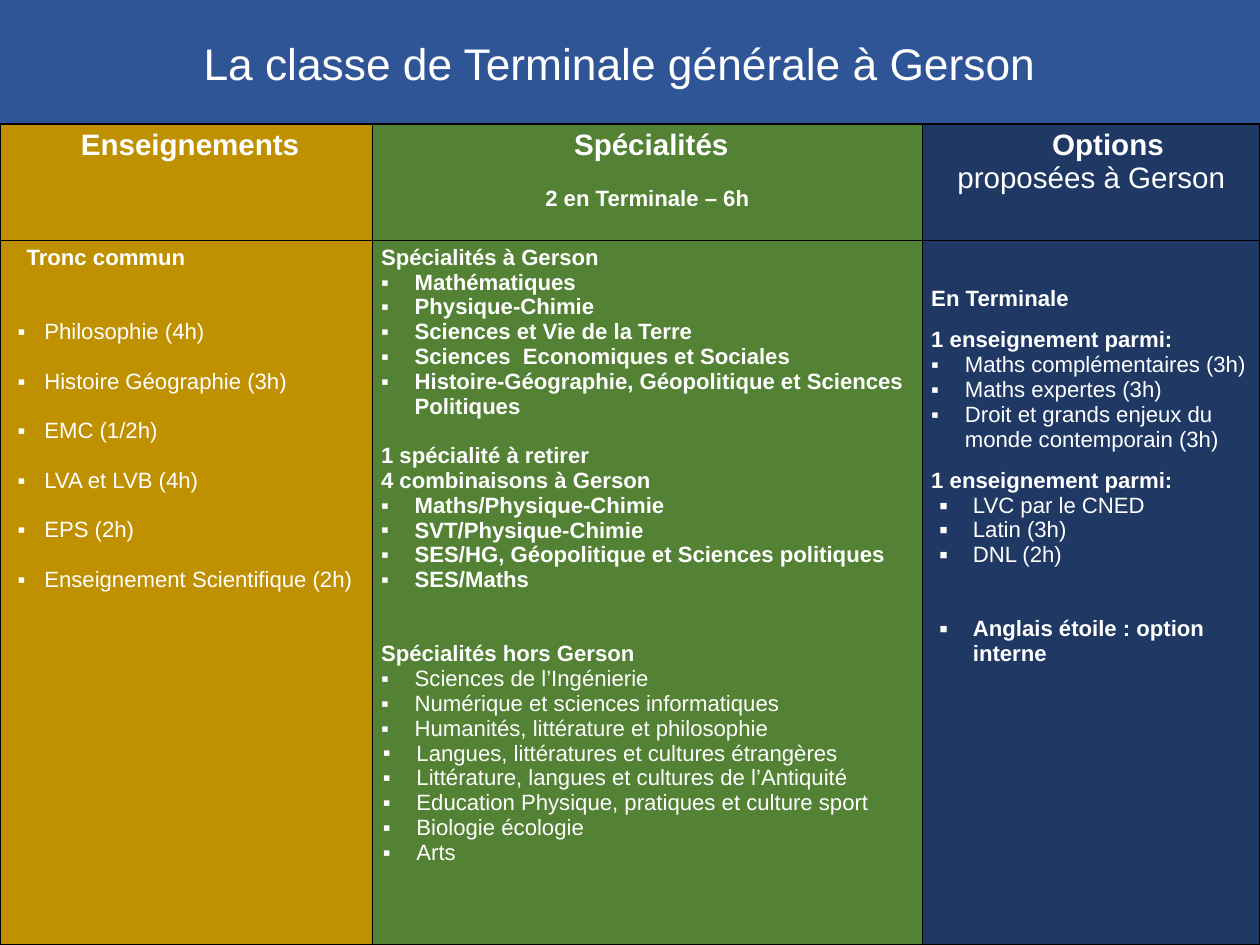
from dataclasses import dataclass

from lxml.etree import SubElement
from pptx import Presentation
from pptx.dml.color import RGBColor
from pptx.enum.text import MSO_ANCHOR, MSO_AUTO_SIZE, PP_ALIGN
from pptx.oxml.ns import qn
from pptx.util import Inches, Pt

SLIDE_WIDTH, SLIDE_HEIGHT = Inches(14.22), Inches(10.67)
COLUMN_WIDTHS = (Inches(4.2), Inches(6.21), Inches(3.81))
ROW_HEIGHTS = (Inches(1.32), Inches(7.94))
TABLE_TOP = Inches(1.4)

BLUE = RGBColor(0x2F, 0x55, 0x97)
GOLD = RGBColor(0xBF, 0x90, 0x00)
GREEN = RGBColor(0x54, 0x82, 0x35)
NAVY = RGBColor(0x20, 0x38, 0x64)
BLACK = RGBColor(0, 0, 0)
WHITE = RGBColor(0xFF, 0xFF, 0xFF)

FONT = "Arial"
BLANK_LINE = 20.1
SECTION_GAP = 13.4


@dataclass
class Line:
    text: str
    bold: bool = False
    size: int = 18
    gap: float = 0
    margin: float = 0
    hanging: float = 0
    bullet_size: int = 100


def heading(text, gap=0, margin=0):
    return Line(text, True, gap=gap, margin=margin)


def bullets(texts, bold=False, gap=0, margin=0.38, hanging=0.38, bullet_size=100):
    return [Line(text, bold, 18, gap, margin, hanging, bullet_size) for text in texts]


HEADERS = (
    [Line("Enseignements", True, 24, margin=0.09)],
    [Line("Spécialités", True, 24, margin=0.09),
     heading("2 en Terminale – 6h", BLANK_LINE)],
    [Line("Options", True, 24, margin=0.38), Line("proposées à Gerson", size=24)],
)

COMMON_CORE = [
    heading("Tronc commun", margin=0.2),
    *bullets(["Philosophie (4h)"], gap=2 * BLANK_LINE, margin=0.4, hanging=0.3),
    *bullets(["Histoire Géographie (3h)", "EMC (1/2h)", "LVA et LVB (4h)", "EPS (2h)",
              "Enseignement Scientifique (2h)"], gap=BLANK_LINE, margin=0.4, hanging=0.3),
]

SPECIALTIES = [
    heading("Spécialités à Gerson"),
    *bullets(["Mathématiques", "Physique-Chimie", "Sciences et Vie de la Terre",
              "Sciences  Economiques et Sociales",
              "Histoire-Géographie, Géopolitique et Sciences Politiques"], bold=True),
    heading("1 spécialité à retirer", BLANK_LINE),
    heading("4 combinaisons à Gerson"),
    *bullets(["Maths/Physique-Chimie", "SVT/Physique-Chimie",
              "SES/HG, Géopolitique et Sciences politiques", "SES/Maths"], bold=True),
    heading("Spécialités hors Gerson", 2 * BLANK_LINE),
    *bullets(["Sciences de l’Ingénierie", "Numérique et sciences informatiques",
              "Humanités, littérature et philosophie"]),
    *bullets(["Langues, littératures et cultures étrangères",
              "Littérature, langues et cultures de l’Antiquité",
              "Education Physique, pratiques et culture sport",
              "Biologie écologie", "Arts"], margin=0.4),
]

OPTIONS = [
    heading("En Terminale"),
    heading("1 enseignement parmi:", SECTION_GAP),
    *bullets(["Maths complémentaires (3h)", "Maths expertes (3h)",
              "Droit et grands enjeux du monde contemporain (3h)"]),
    heading("1 enseignement parmi:", SECTION_GAP),
    *bullets(["LVC par le CNED", "Latin (3h)", "DNL (2h)"], margin=0.47, bullet_size=115),
    *bullets(["Anglais étoile : option interne"], True, 2 * BLANK_LINE, 0.47,
             bullet_size=115),
]


def format_font(font, size, bold):
    font.name, font.size, font.bold = FONT, Pt(size), bold
    font.color.rgb = WHITE


def format_line(paragraph, line, alignment):
    paragraph.alignment = alignment
    paragraph.space_before = Pt(line.gap)
    properties = paragraph._p.get_or_add_pPr()
    properties.set("marL", str(Inches(line.margin)))
    properties.set("indent", str(-Inches(line.hanging)))
    if line.hanging:
        SubElement(properties, qn("a:buSzPct"), val=str(line.bullet_size * 1000))
        SubElement(properties, qn("a:buFont"), typeface=FONT)
        SubElement(properties, qn("a:buChar"), char="▪")
    for run in paragraph.runs:
        format_font(run.font, line.size, line.bold)


def draw_borders(cell):
    properties = cell._tc.get_or_add_tcPr()
    for side in ("a:lnL", "a:lnR", "a:lnT", "a:lnB"):
        border = SubElement(properties, qn(side), w=str(Pt(1)))
        paint = SubElement(border, qn("a:solidFill"))
        SubElement(paint, qn("a:srgbClr"), val=str(BLACK))


def fill_cell(cell, lines, color, alignment):
    draw_borders(cell)
    cell.fill.solid()
    cell.fill.fore_color.rgb = color
    cell.vertical_anchor = MSO_ANCHOR.TOP
    cell.text_frame.text = "\n".join(line.text for line in lines)
    for paragraph, line in zip(cell.text_frame.paragraphs, lines):
        format_line(paragraph, line, alignment)


def add_title(slide, text):
    title = slide.shapes.title
    title.left, title.top = Inches(0.25), Inches(0.35)
    title.width, title.height = Inches(13.62), Inches(0.71)
    title.fill.solid()
    title.fill.fore_color.rgb = BLUE
    frame = title.text_frame
    frame.text = text
    frame.auto_size = MSO_AUTO_SIZE.NONE
    frame.vertical_anchor = MSO_ANCHOR.MIDDLE
    frame.margin_right = Inches(0.24)
    frame.paragraphs[0].alignment = PP_ALIGN.CENTER
    format_font(frame.paragraphs[0].runs[0].font, 36, False)


def add_curriculum(slide):
    curriculum = slide.shapes.add_table(
        2, 3, 0, TABLE_TOP, SLIDE_WIDTH, sum(ROW_HEIGHTS)).table
    for column, width in zip(curriculum.columns, COLUMN_WIDTHS):
        column.width = width
    for row, height in zip(curriculum.rows, ROW_HEIGHTS):
        row.height = height
    subjects = (COMMON_CORE, SPECIALTIES, OPTIONS)
    for index, (header, body, color) in enumerate(
            zip(HEADERS, subjects, (GOLD, GREEN, NAVY))):
        fill_cell(curriculum.cell(0, index), header, color, PP_ALIGN.CENTER)
        fill_cell(curriculum.cell(1, index), body, color, PP_ALIGN.LEFT)
    curriculum.cell(1, 2).margin_top = Inches(0.05) + Pt(BLANK_LINE + SECTION_GAP)


def main():
    presentation = Presentation()
    presentation.slide_width, presentation.slide_height = SLIDE_WIDTH, SLIDE_HEIGHT
    slide = presentation.slides.add_slide(presentation.slide_layouts[5])
    slide.background.fill.solid()
    slide.background.fill.fore_color.rgb = BLUE
    add_title(slide, "La classe de Terminale générale à Gerson")
    add_curriculum(slide)
    presentation.save("out.pptx")


if __name__ == "__main__":
    main()
